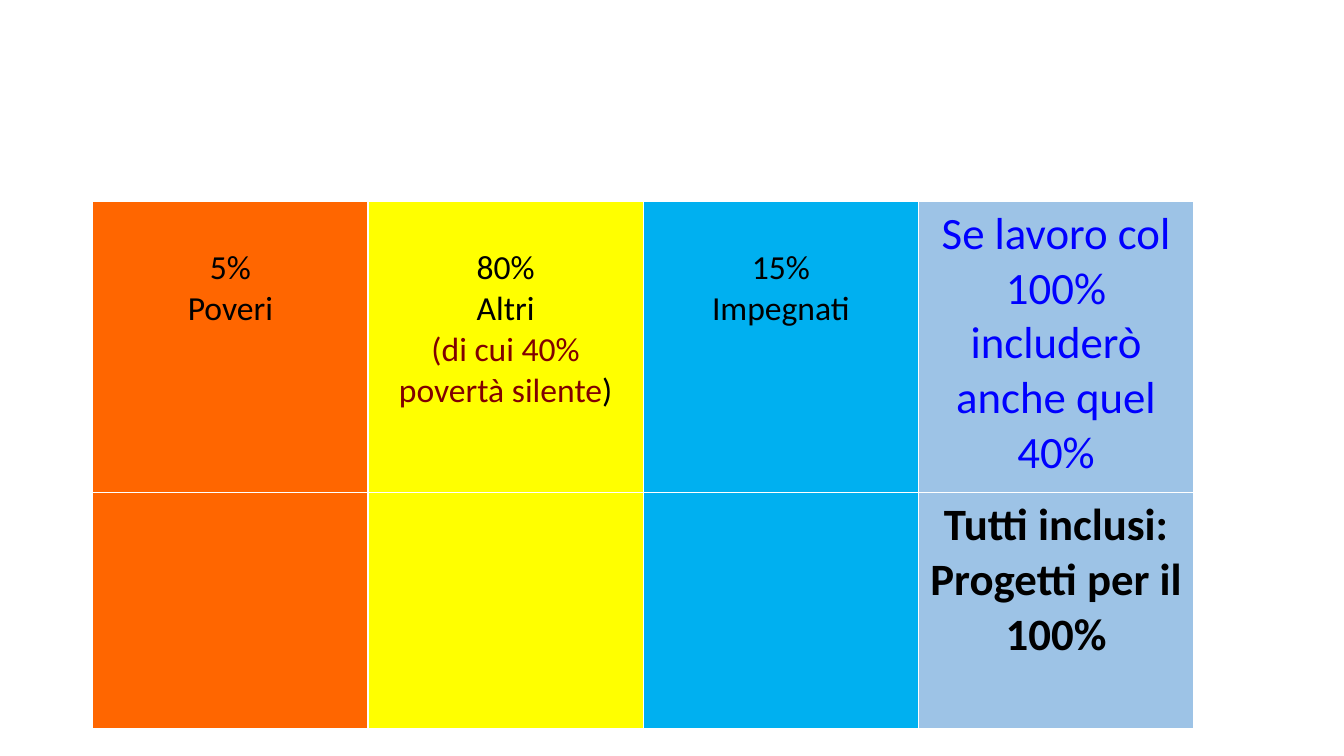
from lxml.etree import SubElement
from pptx import Presentation
from pptx.dml.color import RGBColor
from pptx.enum.text import PP_ALIGN
from pptx.oxml.ns import qn
from pptx.util import Inches, Pt

COLORS = {
    "orange": "FF6600",
    "yellow": "FFFF00",
    "cyan": "00B0F0",
    "pale": "9DC3E6",
    "black": "000000",
    "maroon": "800000",
    "blue": "0000FF",
    "white": "FFFFFF",
}
COLUMN_FILLS = ["orange", "yellow", "cyan", "pale"]
ROW_HEIGHTS = [2.89, 2.34]
COLUMN_WIDTH = 2.73
GROUP = {"size": Pt(24), "bold": False, "name": "Calibri"}
CLAIM = {**GROUP, "size": Pt(32)}
RESULT = {**CLAIM, "bold": True}
GROUP_TOP = 0.46
CLAIM_TOP = 0.05

CELLS = {
    (0, 0): (GROUP, GROUP_TOP, [[("5%", "black")], [("Poveri", "black")]]),
    (0, 1): (GROUP, GROUP_TOP, [
        [("80%", "black")],
        [("Altri", "black")],
        [("(di cui 40% povertà silente", "maroon"), (")", "black")],
    ]),
    (0, 2): (GROUP, GROUP_TOP, [[("15%", "black")], [("Impegnati", "black")]]),
    (0, 3): (CLAIM, CLAIM_TOP, [
        [("Se lavoro col 100% includerò anche quel 40%", "blue")],
    ]),
    (1, 3): (RESULT, CLAIM_TOP, [
        [("Tutti inclusi:", "black")],
        [("Progetti per il 100%", "black")],
    ]),
}


def rgb(color):
    return RGBColor.from_string(COLORS[color])


def add_borders(cell, color, width):
    tc_pr = cell._tc.get_or_add_tcPr()
    for index, side in enumerate(("a:lnL", "a:lnR", "a:lnT", "a:lnB")):
        ln = tc_pr.makeelement(qn(side), {"w": str(Pt(width))})
        fill = SubElement(ln, qn("a:solidFill"))
        SubElement(fill, qn("a:srgbClr"), val=COLORS[color])
        tc_pr.insert(index, ln)


def fill_cell(cell, color):
    cell.fill.solid()
    cell.fill.fore_color.rgb = rgb(color)
    add_borders(cell, "white", 1)


def write_cell(cell, style, top, lines):
    cell.margin_top = Inches(top)
    tf = cell.text_frame
    for index, runs in enumerate(lines):
        p = tf.add_paragraph() if index else tf.paragraphs[0]
        p.alignment = PP_ALIGN.CENTER
        for text, color in runs:
            r = p.add_run()
            r.text = text
            for key, value in style.items():
                setattr(r.font, key, value)
            r.font.color.rgb = rgb(color)


def add_groups_table(s):
    width = COLUMN_WIDTH * len(COLUMN_FILLS)
    table = s.shapes.add_table(
        len(ROW_HEIGHTS), len(COLUMN_FILLS),
        Inches(0.92), Inches(2), Inches(width), Inches(sum(ROW_HEIGHTS)),
    ).table
    for row, height in zip(table.rows, ROW_HEIGHTS):
        row.height = Inches(height)
    for index, color in enumerate(COLUMN_FILLS):
        table.columns[index].width = Inches(COLUMN_WIDTH)
        for row in range(len(ROW_HEIGHTS)):
            fill_cell(table.cell(row, index), color)
    for position, content in CELLS.items():
        write_cell(table.cell(*position), *content)


def main():
    prs = Presentation()
    prs.slide_width = Inches(13.33)
    prs.slide_height = Inches(7.5)
    s = prs.slides.add_slide(prs.slide_layouts[6])
    add_groups_table(s)
    prs.save("out.pptx")


if __name__ == "__main__":
    main()
